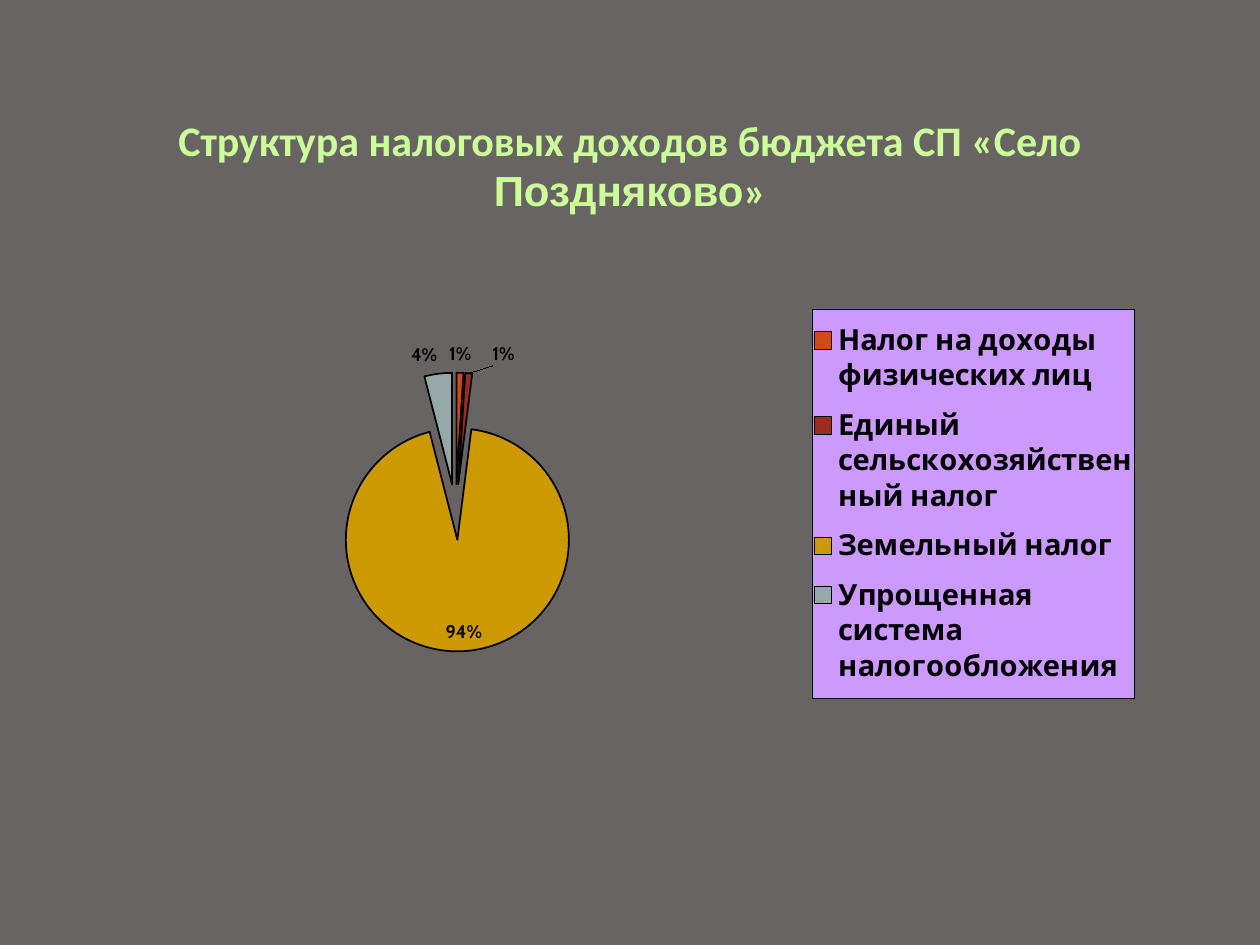
from lxml.etree import SubElement
from pptx import Presentation
from pptx.chart.data import CategoryChartData
from pptx.dml.color import RGBColor
from pptx.enum.chart import XL_CHART_TYPE as ChartType
from pptx.enum.chart import XL_LABEL_POSITION as LabelPosition
from pptx.enum.chart import XL_LEGEND_POSITION as LegendPosition
from pptx.enum.text import MSO_ANCHOR as Anchor
from pptx.enum.text import PP_ALIGN as Align
from pptx.oxml import parse_xml
from pptx.oxml.ns import nsdecls, qn
from pptx.util import Inches, Pt

BACKGROUND = RGBColor(0x69, 0x64, 0x64)
TITLE_COLOR = RGBColor(0xCC, 0xFF, 0x99)
LEGEND_FILL = RGBColor(0xCC, 0x99, 0xFF)
BLACK = RGBColor(0, 0, 0)
TAXES = [
    ("Налог на доходы физических лиц", 1, RGBColor(0xD3, 0x48, 0x17)),
    ("Единый сельскохозяйственный налог", 1, RGBColor(0x9B, 0x2D, 0x1F)),
    ("Земельный налог", 94, RGBColor(0xCC, 0x99, 0x00)),
    ("Упрощенная система налогообложения", 4, RGBColor(0x96, 0xA9, 0xA9)),
]
FARM_TAX, LAND_TAX = 1, 2


def set_font(font, size):
    """Apply the bold black chart font at the given size."""
    font.name, font.size, font.bold = "Cabin", Pt(size), True
    font.color.rgb = BLACK


def insert_layout(element, position, **values):
    """Put a manual layout into a chart part, replacing any present one."""
    for present in element.findall(qn("c:layout")):
        element.remove(present)
    layout = parse_xml(f"<c:layout {nsdecls('c')}/>")
    manual = SubElement(layout, qn("c:manualLayout"))
    for name, value in values.items():
        SubElement(manual, qn(f"c:{name}")).set("val", str(value))
    element.insert(position, layout)


def add_title(slide):
    """Add the centred slide title."""
    shape = slide.shapes.add_textbox(Inches(0.5), Inches(0.91), Inches(9), Inches(0.79))
    frame = shape.text_frame
    frame.word_wrap = True
    frame.vertical_anchor = Anchor.MIDDLE
    paragraph = frame.paragraphs[0]
    paragraph.alignment = Align.CENTER
    paragraph.font.size, paragraph.font.bold = Pt(24), True
    paragraph.font.color.rgb = TITLE_COLOR
    for text, font_name in [
        ("Структура налоговых доходов бюджета СП «Село ", "Calibri"),
        ("Поздняково", "Arial"),
        ("»", "Calibri"),
    ]:
        run = paragraph.add_run()
        run.text, run.font.name = text, font_name


def add_pie(slide):
    """Add the exploded pie chart of tax revenues."""
    data = CategoryChartData()
    data.categories = [name for name, _, _ in TAXES]
    data.add_series("Series 1", [value for _, value, _ in TAXES])
    chart = slide.shapes.add_chart(
        ChartType.PIE_EXPLODED, Inches(0.33), Inches(1.76), Inches(9.13), Inches(4.61), data
    ).chart
    chart.has_title = False
    set_font(chart.font, 18)
    chart.plots[0].vary_by_categories = True
    insert_layout(
        chart.element.find(".//" + qn("c:plotArea")), 0,
        layoutTarget="inner", xMode="edge", yMode="edge", x=0.05, y=0.26, w=0.62, h=0.48,
    )
    style_slices(chart.plots[0].series[0])
    style_labels(chart)
    style_legend(chart)


def style_slices(series):
    """Colour and outline the slices."""
    for index, (_, _, color) in enumerate(TAXES):
        slice_format = series.points[index].format
        slice_format.fill.solid()
        slice_format.fill.fore_color.rgb = color
        slice_format.line.color.rgb = BLACK
        slice_format.line.width = Pt(1)


def style_labels(chart):
    """Show percentages outside the slices, and inside the largest one."""
    series = chart.plots[0].series[0]
    labels = series.data_labels
    labels.show_percentage, labels.show_value = True, False
    labels.number_format, labels.number_format_is_linked = "0%", False
    labels.position = LabelPosition.OUTSIDE_END
    set_font(labels.font, 10.5)
    for index, position in [
        (FARM_TAX, LabelPosition.OUTSIDE_END),
        (LAND_TAX, LabelPosition.INSIDE_END),
    ]:
        label = series.points[index].data_label
        set_font(label.font, 10.5)
        label.position = position
    for element in chart.element.iter(qn("c:dLbl")):
        element.find(qn("c:showVal")).set("val", "0")
        element.find(qn("c:showPercent")).set("val", "1")
        if element.find(qn("c:idx")).get("val") == str(FARM_TAX):
            insert_layout(element, 1, x=0.02, y=0)


def style_legend(chart):
    """Add the filled and outlined legend on the right."""
    chart.has_legend = True
    legend = chart.legend
    legend.position = LegendPosition.RIGHT
    legend.include_in_layout = False
    set_font(legend.font, 16.6)
    element = chart.element.find(".//" + qn("c:legend"))
    insert_layout(element, 1, xMode="edge", yMode="edge", x=0.67, y=0.15, w=0.28, h=0.67)
    element.find(qn("c:txPr")).addprevious(parse_xml(
        f"<c:spPr {nsdecls('c', 'a')}>"
        f'<a:solidFill><a:srgbClr val="{LEGEND_FILL}"/></a:solidFill>'
        f'<a:ln w="3175"><a:solidFill><a:srgbClr val="{BLACK}"/></a:solidFill></a:ln>'
        "</c:spPr>"
    ))


def main():
    """Build and save the slide."""
    presentation = Presentation()
    presentation.slide_width, presentation.slide_height = Inches(10), Inches(7.5)
    slide = presentation.slides.add_slide(presentation.slide_layouts[6])
    slide.background.fill.solid()
    slide.background.fill.fore_color.rgb = BACKGROUND
    add_title(slide)
    add_pie(slide)
    presentation.save("out.pptx")


if __name__ == "__main__":
    main()
